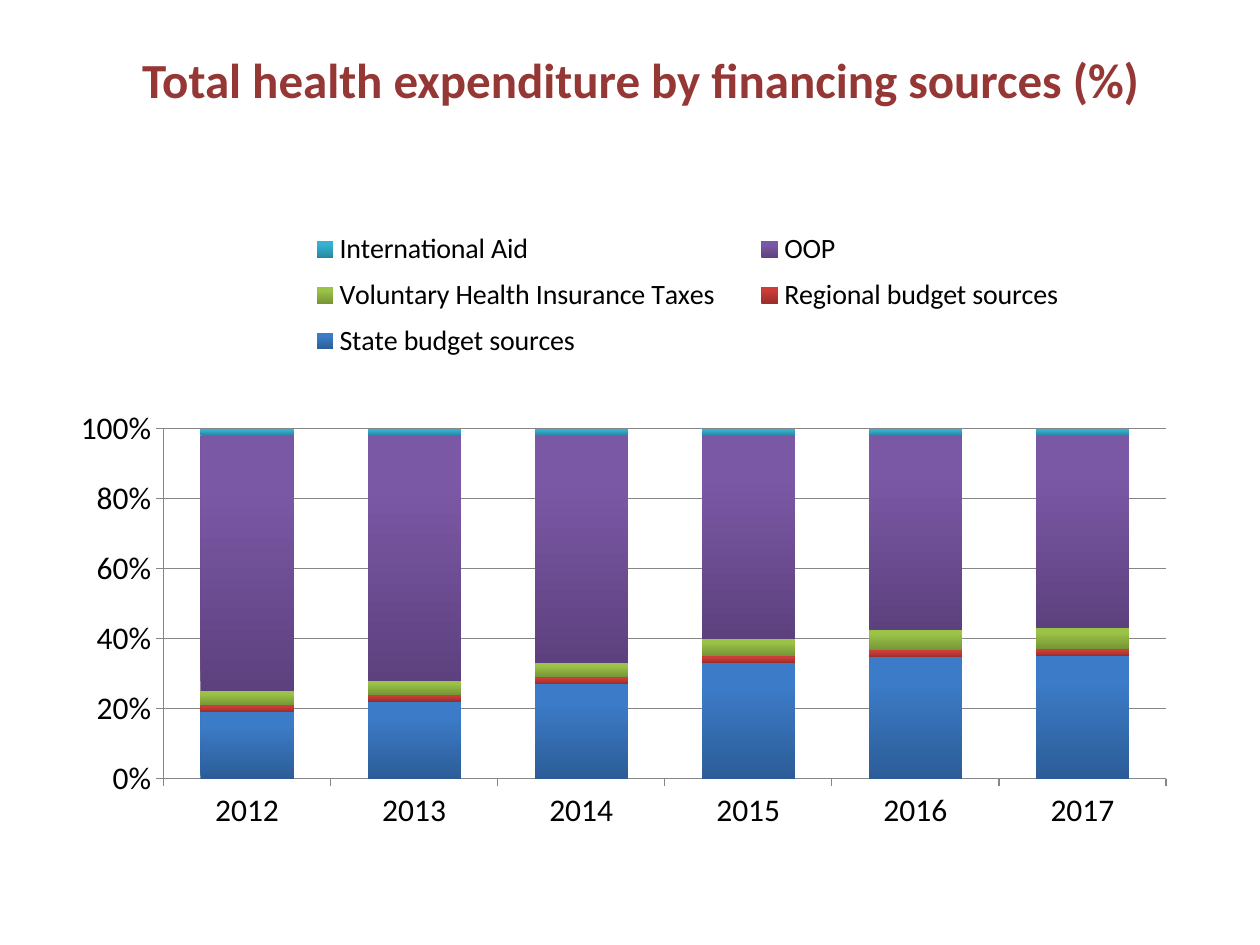
from lxml import etree
from pptx import Presentation
from pptx.chart import data
from pptx.dml.color import RGBColor
from pptx.enum import chart as charts, text
from pptx.oxml import ns
from pptx.util import Pt

FONT = "Calibri"
YEARS = ["2012", "2013", "2014", "2015", "2016", "2017"]
SOURCES = [
    ("State budget sources", (19, 22, 27, 33, 35, 35), "2C5D98", "3C7BC7"),
    ("Regional budget sources", (2, 2, 2, 2, 2, 2), "9B2D2A", "CB3D3A"),
    ("Voluntary Health Insurance Taxes", (4, 4, 4, 5, 6, 6), "769535", "9BC348"),
    ("OOP", (73, 70, 65, 58, 56, 55), "5D417E", "7B58A6"),
    ("International Aid", (2, 2, 2, 2, 2, 2), "2787A0", "36B1D2"),
]


def color(value):
    """Return the colour for a hex string."""
    return RGBColor.from_string(value)


def place(shape, left, top, width, height):
    """Set a shape's position and size in points."""
    shape.left, shape.top = Pt(left), Pt(top)
    shape.width, shape.height = Pt(width), Pt(height)


def set_font(font, size, value):
    """Set the typeface, size and colour of a font."""
    font.name, font.size = FONT, Pt(size)
    font.color.rgb = color(value)


def add_title(slide, wording):
    """Fill and format the title placeholder."""
    title = slide.shapes.title
    place(title, 12, 0, 708, 90)
    frame = title.text_frame
    frame.text = wording
    frame.word_wrap = True
    frame.vertical_anchor = text.MSO_ANCHOR.MIDDLE
    paragraph = frame.paragraphs[0]
    paragraph.alignment = text.PP_ALIGN.CENTER
    font = paragraph.runs[0].font
    set_font(font, 28, "953735")
    font.bold = True


def set_layout(element, successors, box, inner=False):
    """Give a chart part a manual layout in fractions of the chart."""
    for old in element.findall(ns.qn("c:layout")):
        element.remove(old)
    layout = etree.Element(ns.qn("c:layout"))
    manual = etree.SubElement(layout, ns.qn("c:manualLayout"))
    values = [("layoutTarget", "inner")] if inner else []
    values += [("xMode", "edge"), ("yMode", "edge"), *zip("xywh", box)]
    for name, value in values:
        etree.SubElement(manual, ns.qn(f"c:{name}"), val=str(value))
    following = next(child for child in element
                     if child.tag in [ns.qn(name) for name in successors])
    following.addprevious(layout)


def fill_gradient(series, bottom, top):
    """Shade a series from a dark base to a light top."""
    fill = series.format.fill
    fill.gradient()
    fill.gradient_angle = 90
    for stop, position, value in zip(fill.gradient_stops, (0, 0.8), (bottom, top)):
        stop.position = position
        stop.color.rgb = color(value)


def format_axis(axis):
    """Draw an axis with outside ticks and a thin grey line."""
    axis.major_tick_mark = charts.XL_TICK_MARK.OUTSIDE
    axis.minor_tick_mark = charts.XL_TICK_MARK.NONE
    set_font(axis.tick_labels.font, 18, "000000")
    axis.format.line.color.rgb = color("868686")
    axis.format.line.width = Pt(0.75)


def add_chart(slide):
    """Add the stacked percentage chart of financing sources."""
    chart_data = data.CategoryChartData()
    chart_data.categories = YEARS
    for name, values, _, _ in SOURCES:
        chart_data.add_series(name, values)
    chart = slide.shapes.add_chart(
        charts.XL_CHART_TYPE.COLUMN_STACKED_100,
        Pt(30), Pt(102), Pt(648), Pt(405), chart_data).chart
    chart.has_title = False
    set_font(chart.font, 18, "000000")

    plot = chart.plots[0]
    plot.gap_width, plot.overlap = 79, 100
    plot.vary_by_categories = False
    for series, (_, _, bottom, top) in zip(plot.series, SOURCES):
        fill_gradient(series, bottom, top)

    format_axis(chart.category_axis)
    format_axis(chart.value_axis)
    chart.value_axis.major_unit = 0.2
    chart.value_axis.maximum_scale = 1
    chart.value_axis.minimum_scale = 0
    chart.value_axis.tick_labels.number_format = "0%"
    chart.value_axis.tick_labels.number_format_is_linked = False
    chart.value_axis.has_major_gridlines = True
    gridline = chart.value_axis.major_gridlines.format.line
    gridline.color.rgb = color("868686")
    gridline.width = Pt(0.75)

    chart.has_legend = True
    legend = chart.legend
    legend.position = charts.XL_LEGEND_POSITION.RIGHT
    legend.include_in_layout = False
    set_font(legend.font, 16, "000000")
    set_layout(legend._element, ["c:overlay"], (0.2, 0.06, 0.72, 0.21))
    set_layout(plot._element.getparent(), ["c:barChart"],
               (0.098, 0.353, 0.884, 0.494), inner=True)


def main():
    """Build and save the slide."""
    presentation = Presentation()
    presentation.slide_width, presentation.slide_height = Pt(720), Pt(540)
    slide = presentation.slides.add_slide(presentation.slide_layouts[5])
    add_title(slide, "Total health expenditure by financing sources (%)")
    add_chart(slide)
    presentation.save("out.pptx")


if __name__ == "__main__":
    main()
